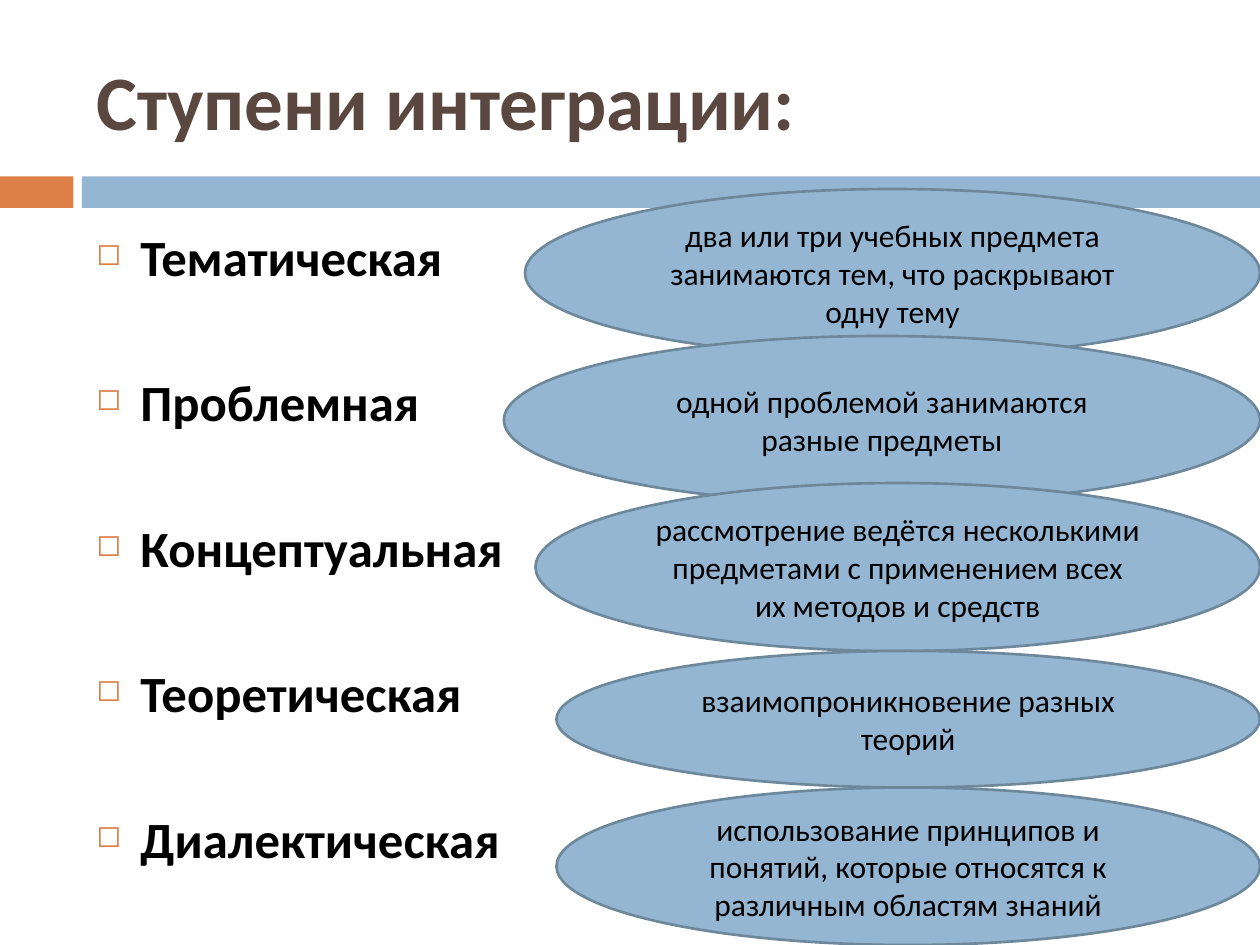
import pptx
import pptx.util
import pptx.dml.color
import pptx.enum.shapes
import pptx.enum.text
from lxml import etree

RGBColor = pptx.dml.color.RGBColor
Pt = pptx.util.Pt
ORANGE = RGBColor(0xDD, 0x80, 0x47)
BLUE = RGBColor(0x94, 0xB6, 0xD2)
OUTLINE = RGBColor(0x6D, 0x87, 0x9B)
BROWN = RGBColor(0x59, 0x47, 0x40)
BLACK = RGBColor(0, 0, 0)
FONT = "Calibri"
COLUMNS, ROWS = 120, 90
UNIT = pptx.util.Inches(10) // COLUMNS
SHAPES = pptx.enum.shapes.MSO_SHAPE
MIDDLE = pptx.enum.text.MSO_ANCHOR.MIDDLE

STAGES = [
    ("Тематическая", "два или три учебных предмета занимаются тем, что раскрывают одну тему", (50, 18, 16)),
    ("Проблемная", "одной проблемой занимаются разные предметы", (48, 32, 16)),
    ("Концептуальная", "рассмотрение ведётся несколькими предметами с применением всех их методов и средств", (51, 46, 16)),
    ("Теоретическая", "взаимопроникновение разных теорий", (53, 62, 13)),
    ("Диалектическая", "использование принципов и понятий, которые относятся к различным областям знаний", (53, 75, 15)),
]


def grid_box(*cells):
    return [round(cell * UNIT) for cell in cells]


def style_text(paragraph, size, color, bold=False):
    for run in paragraph.runs:
        run.font.name = FONT
        run.font.size = Pt(size)
        run.font.bold = bold
        run.font.color.rgb = color


def add_filled(slide, kind, box, color):
    figure = slide.shapes.add_shape(kind, *box)
    figure.shadow.inherit = False
    figure.fill.solid()
    figure.fill.fore_color.rgb = color
    figure.line.fill.background()
    return figure


def add_band(slide, box):
    left, top, width, height = box
    accent_width, bar_start = grid_box(7, 7.8)
    add_filled(slide, SHAPES.RECTANGLE, (left, top, accent_width, height), ORANGE)
    add_filled(slide, SHAPES.RECTANGLE, (left + bar_start, top, width - bar_start, height), BLUE)


def add_title(slide, box):
    frame = slide.shapes.add_textbox(*box).text_frame
    frame.word_wrap = True
    frame.vertical_anchor = MIDDLE
    frame.text = "Ступени интеграции:"
    style_text(frame.paragraphs[0], 44, BROWN, True)


def add_square_bullet(paragraph):
    indent = pptx.util.Inches(0.35)
    properties = paragraph._p.get_or_add_pPr()
    properties.set("marL", str(indent))
    properties.set("indent", str(-indent))
    namespace = properties.nsmap["a"]

    def add(parent, tag, **attributes):
        return etree.SubElement(parent, f"{{{namespace}}}{tag}", **attributes)

    add(add(properties, "buClr"), "srgbClr", val=str(ORANGE))
    add(properties, "buSzPct", val="60000")
    add(properties, "buChar", char="◻")


def add_stage_list(slide, box):
    frame = slide.shapes.add_textbox(*box).text_frame
    frame.word_wrap = True
    frame.text = "\n".join(name for name, _, _ in STAGES)
    for paragraph in frame.paragraphs:
        paragraph.space_after = Pt(48.3)
        style_text(paragraph, 29, BLACK, True)
        add_square_bullet(paragraph)


def add_explanation(slide, box, explanation):
    bubble = add_filled(slide, SHAPES.OVAL, box, BLUE)
    bubble.line.color.rgb = OUTLINE
    bubble.line.width = Pt(1.5)
    frame = bubble.text_frame
    frame.word_wrap = True
    frame.vertical_anchor = MIDDLE
    frame.text = explanation
    frame.paragraphs[0].alignment = pptx.enum.text.PP_ALIGN.CENTER
    style_text(frame.paragraphs[0], 18, BLACK)


def main():
    deck = pptx.Presentation()
    deck.slide_width, deck.slide_height = grid_box(COLUMNS, ROWS)
    slide = deck.slides.add_slide(deck.slide_layouts[6])
    add_band(slide, grid_box(0, 16.8, COLUMNS, 3))
    add_title(slide, grid_box(8, 3, 107, 13))
    add_stage_list(slide, grid_box(8, 20.9, 51, 60))
    for _, explanation, (left, top, height) in STAGES:
        add_explanation(slide, grid_box(left, top, COLUMNS - left, height), explanation)
    deck.save("out.pptx")


if __name__ == "__main__":
    main()
